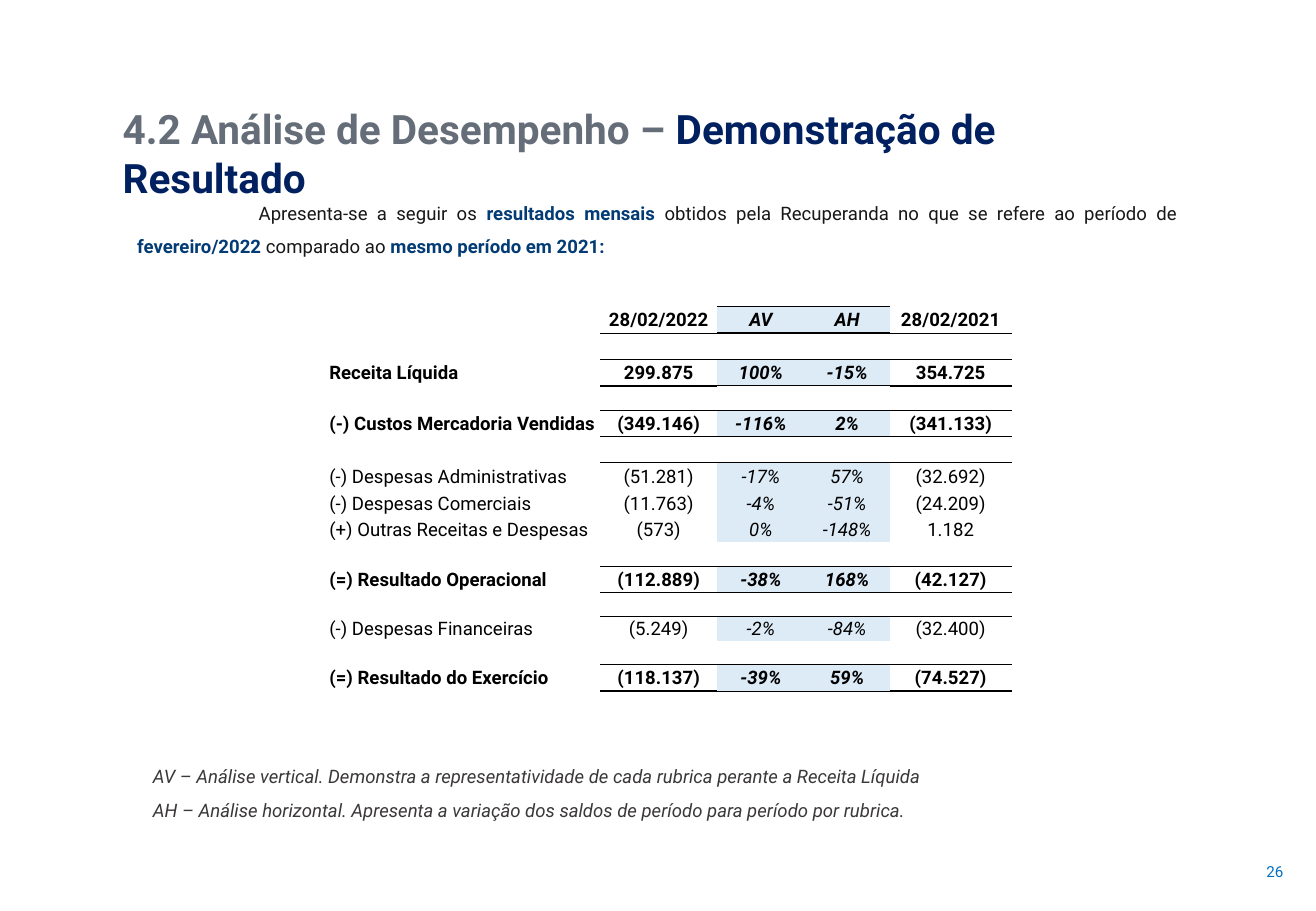
from dataclasses import dataclass

from lxml.etree import SubElement
from pptx import Presentation
from pptx.dml.color import RGBColor
from pptx.enum.text import MSO_ANCHOR, MSO_AUTO_SIZE, PP_ALIGN
from pptx.oxml import parse_xml
from pptx.oxml.ns import nsdecls, qn
from pptx.util import Inches, Pt


@dataclass(frozen=True)
class Theme:
    font: str = "Roboto"
    title_size: int = 24
    body_size: int = 11
    number_size: int = 9
    gap_size: int = 6
    title_gray: str = "656D78"
    title_navy: str = "002060"
    ink: str = "181717"
    accent: str = "033C75"
    note: str = "3B3838"
    page: str = "0070C0"
    black: str = "000000"
    shade: str = "DDEBF7"


THEME = Theme()
SLIDE_WIDTH, SLIDE_HEIGHT = Inches(10.83), Inches(7.5)

# Content: each paragraph is a list of (text, format) runs
GRAY = {"color": THEME.title_gray, "bold": True}
NAVY = {"color": THEME.title_navy, "bold": True}
PLAIN = {"color": THEME.ink}
STRONG = {"color": THEME.accent, "bold": True}
NOTE = {"color": THEME.note, "italic": True}

TITLE = [[("4.2 Análise de Desempenho – ", GRAY), ("Demonstração de Resultado", NAVY)]]
INTRO = [[
    ("Apresenta-se a seguir os ", PLAIN),
    ("resultados mensais ", STRONG),
    ("obtidos pela Recuperanda no que se refere ao período de ", PLAIN),
    ("fevereiro/2022 ", STRONG),
    ("comparado ao ", PLAIN),
    ("mesmo período em 2021:", STRONG),
]]
NOTES = [
    [("AV – Análise vertical. Demonstra a representatividade de cada rubrica perante a Receita Líquida", NOTE)],
    [("AH – Análise horizontal. Apresenta a variação dos saldos de período para período por rubrica.", NOTE)],
]
PAGE_NUMBER = [[("26", {"color": THEME.page})]]

# Statement rows: (kind, height in % of the slide, cell texts)
STATEMENT = [
    ("header", 2.96, ("", "28/02/2022", "AV", "AH", "28/02/2021")),
    ("gap", 2.85, ()),
    ("total", 2.96, ("Receita Líquida", "299.875", "100%", "-15%", "354.725")),
    ("gap", 2.74, ()),
    ("total", 2.85, ("(-) Custos Mercadoria Vendidas", "(349.146)", "-116%", "2%", "(341.133)")),
    ("gap", 2.85, ()),
    ("detail", 2.96, ("(-) Despesas Administrativas", "(51.281)", "-17%", "57%", "(32.692)")),
    ("detail", 2.96, ("(-) Despesas Comerciais", "(11.763)", "-4%", "-51%", "(24.209)")),
    ("detail", 2.85, ("(+) Outras Receitas e Despesas", "(573)", "0%", "-148%", "1.182")),
    ("gap", 2.63, ()),
    ("total", 2.85, ("(=) Resultado Operacional", "(112.889)", "-38%", "168%", "(42.127)")),
    ("gap", 2.63, ()),
    ("detail", 2.74, ("(-) Despesas Financeiras", "(5.249)", "-2%", "-84%", "(32.400)")),
    ("gap", 2.52, ()),
    ("total", 2.96, ("(=) Resultado do Exercício", "(118.137)", "-39%", "59%", "(74.527)")),
]
COLUMN_SHARES = (20.68, 8.89, 6.65, 6.46, 9.27)
RATIO_COLUMNS = (2, 3)
NO_GRID_STYLE = "{2D5ABB26-0587-4C30-8999-92F81FD0307C}"

# Places: left, top, width, height in % of the slide
TITLE_PLACE = (8.4, 10.8, 79.78, 6.67)
INTRO_PLACE = (9.51, 20.27, 80.89, 8.4)
NOTES_PLACE = (10.71, 82.13, 80.33, 8.4)
NUMBER_PLACE = (91.14, 92.27, 7.29, 6.67)
TABLE_CORNER = (24.93, 33.6)


def across(share):
    return round(SLIDE_WIDTH * share / 100)


def down(share):
    return round(SLIDE_HEIGHT * share / 100)


def locate(place):
    left, top, width, height = place
    return across(left), down(top), across(width), down(height)


def write(frame, paragraphs, size=THEME.body_size, align=PP_ALIGN.LEFT,
          spacing=None, indent=0, anchor=MSO_ANCHOR.TOP):
    frame.word_wrap = True
    frame.auto_size = MSO_AUTO_SIZE.NONE
    frame.vertical_anchor = anchor
    for index, runs in enumerate(paragraphs):
        paragraph = frame.add_paragraph() if index else frame.paragraphs[0]
        paragraph.alignment = align
        if spacing:
            paragraph.line_spacing = spacing
        if indent:
            paragraph._p.get_or_add_pPr().set("indent", str(indent))
        for text, style in runs:
            run = paragraph.add_run()
            run.text = text
            run.font.name = THEME.font
            run.font.size = Pt(size)
            run.font.bold = style.get("bold", False)
            run.font.italic = style.get("italic", False)
            run.font.color.rgb = RGBColor.from_string(style["color"])


def add_text(slide, place, paragraphs, **layout):
    write(slide.shapes.add_textbox(*locate(place)).text_frame, paragraphs, **layout)


def rule_widths():
    """Width of each horizontal rule, keyed by (edge above row, column)."""
    rules = {}
    for row, (kind, _, _) in enumerate(STATEMENT):
        for column in range(1, len(COLUMN_SHARES)):
            ratio = column in RATIO_COLUMNS
            if kind == "total" or (kind == "header" and ratio):
                rules[row, column] = 0.5
            if kind in ("header", "total"):
                rules[row + 1, column] = 1 if ratio == (kind == "header") else 0.5
    return rules


def add_rule(cell, tag, width, position):
    cell._tc.get_or_add_tcPr().insert(position, parse_xml(
        f'<a:{tag} {nsdecls("a")} w="{Pt(width)}"><a:solidFill>'
        f'<a:srgbClr val="{THEME.black}"/></a:solidFill></a:{tag}>'))


def add_statement(slide):
    left, top = TABLE_CORNER
    place = (left, top, sum(COLUMN_SHARES), sum(height for _, height, _ in STATEMENT))
    table = slide.shapes.add_table(len(STATEMENT), len(COLUMN_SHARES), *locate(place)).table
    table.first_row = table.horz_banding = False
    table._tbl.tblPr.find(qn("a:tableStyleId")).text = NO_GRID_STYLE
    for column, share in enumerate(COLUMN_SHARES):
        table.columns[column].width = across(share)
    rules = rule_widths()
    for row, (kind, height, texts) in enumerate(STATEMENT):
        table.rows[row].height = down(height)
        for column in range(len(COLUMN_SHARES)):
            cell = table.cell(row, column)
            cell.margin_left = cell.margin_right = cell.margin_top = Inches(0.01)
            cell.margin_bottom = 0
            cell.vertical_anchor = MSO_ANCHOR.MIDDLE
            ratio = column in RATIO_COLUMNS
            if ratio and texts:
                cell.fill.solid()
                cell.fill.fore_color.rgb = RGBColor.from_string(THEME.shade)
            else:
                cell.fill.background()
            # Text, or a small line height where the cell is empty
            if texts and texts[column]:
                style = {"color": THEME.black, "bold": kind != "detail", "italic": ratio}
                write(cell.text_frame, [[(texts[column], style)]],
                      align=PP_ALIGN.CENTER if column else PP_ALIGN.LEFT)
                cell.vertical_anchor = MSO_ANCHOR.MIDDLE
            else:
                SubElement(cell.text_frame.paragraphs[0]._p, qn("a:endParaRPr"),
                           sz=str(THEME.gap_size * 100))
            # Rules above and below
            edges = [("lnT", rules.get((row, column))), ("lnB", rules.get((row + 1, column)))]
            drawn = [edge for edge in edges if edge[1]]
            for position, (tag, width) in enumerate(drawn):
                add_rule(cell, tag, width, position)


def main():
    presentation = Presentation()
    presentation.slide_width, presentation.slide_height = SLIDE_WIDTH, SLIDE_HEIGHT
    slide = presentation.slides.add_slide(presentation.slide_layouts[5])

    # Title
    title = slide.shapes.title
    title.left, title.top, title.width, title.height = locate(TITLE_PLACE)
    write(title.text_frame, TITLE, size=THEME.title_size)

    # Introduction, statement, notes and page number
    add_text(slide, INTRO_PLACE, INTRO, align=PP_ALIGN.JUSTIFY, spacing=1.5, indent=Inches(1))
    add_statement(slide)
    add_text(slide, NOTES_PLACE, NOTES, align=PP_ALIGN.JUSTIFY, spacing=1.5)
    add_text(slide, NUMBER_PLACE, PAGE_NUMBER, size=THEME.number_size,
             align=PP_ALIGN.RIGHT, anchor=MSO_ANCHOR.MIDDLE)

    presentation.save("out.pptx")


if __name__ == "__main__":
    main()
